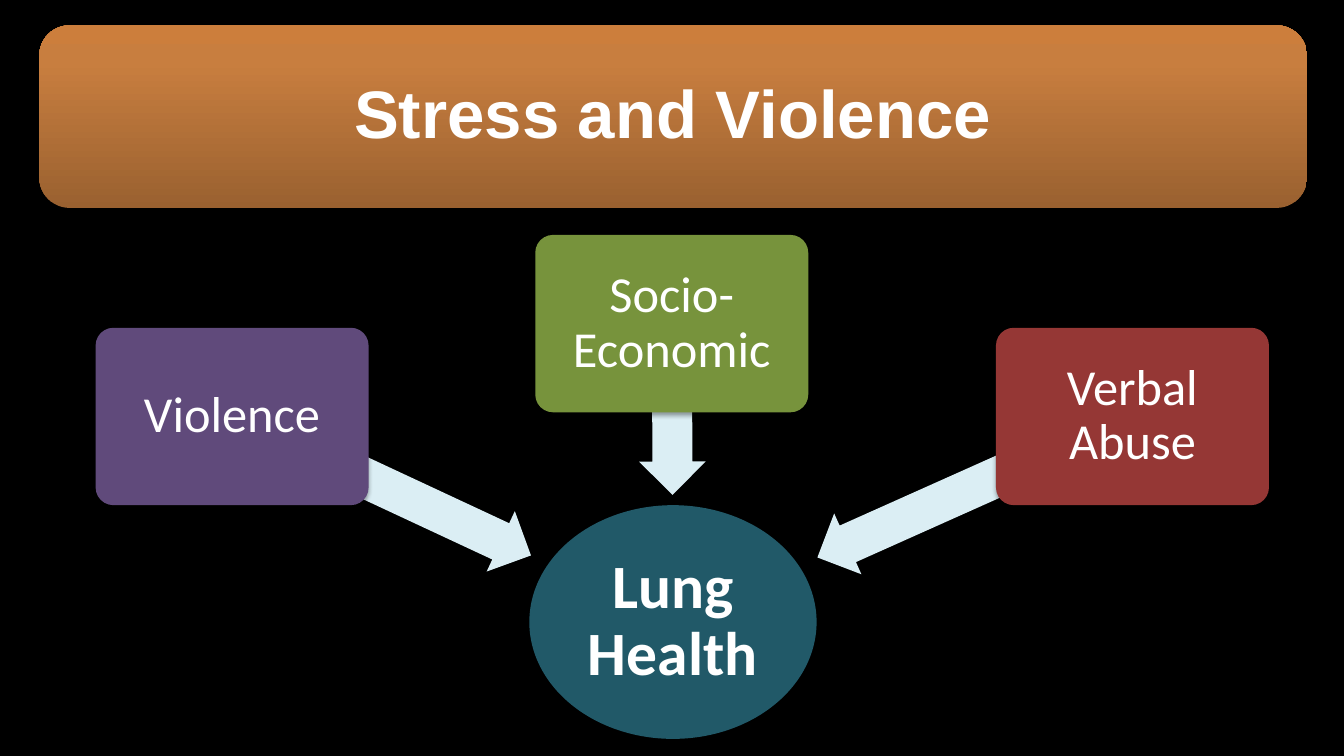
from copy import deepcopy
from dataclasses import dataclass

from lxml import etree
from pptx import Presentation
from pptx import util as u
from pptx.dml.color import RGBColor
from pptx.enum import shapes, text
from pptx.oxml import ns
from pptx.shapes.autoshape import Shape
from pptx.slide import Slide

BLACK = RGBColor(0x00, 0x00, 0x00)
WHITE = RGBColor(0xFF, 0xFF, 0xFF)
BRONZE = RGBColor(0x9A, 0x61, 0x30)
COPPER = RGBColor(0xC8, 0x7E, 0x3F)
AMBER = RGBColor(0xCC, 0x7E, 0x3C)
TEAL = RGBColor(0x21, 0x59, 0x68)
PALE_BLUE = RGBColor(0xDB, 0xEE, 0xF4)
PURPLE = RGBColor(0x60, 0x4A, 0x7B)
GREEN = RGBColor(0x77, 0x93, 0x3C)
RED = RGBColor(0x95, 0x37, 0x35)

CARD_WIDTH, CARD_HEIGHT = 6.88, 4.47
ARROW_HEIGHT = 1.68


@dataclass(frozen=True)
class Box:
    left: float
    top: float
    width: float
    height: float


@dataclass(frozen=True)
class Cause:
    label: str
    color: RGBColor
    card: Box
    arrow: Box
    rotation: float


CAUSES = [
    Cause("Violence", PURPLE, Box(2.41, 8.26, CARD_WIDTH, CARD_HEIGHT),
          Box(5.46, 11.4, 8.31, ARROW_HEIGHT), 205),
    Cause("Socio-Economic", GREEN, Box(13.49, 5.92, CARD_WIDTH, CARD_HEIGHT),
          Box(14.78, 9.47, 4.32, ARROW_HEIGHT), 269.8),
    Cause("Verbal Abuse", RED, Box(25.1, 8.26, CARD_WIDTH, CARD_HEIGHT),
          Box(20.22, 11.43, 8.71, ARROW_HEIGHT), 335.9),
]


def place(shape: Shape, box: Box) -> None:
    shape.left, shape.top = u.Cm(box.left), u.Cm(box.top)
    shape.width, shape.height = u.Cm(box.width), u.Cm(box.height)


def add_shadow(shape: Shape) -> None:
    shape.shadow.inherit = False
    effects = shape.element.spPr.find(ns.qn("a:effectLst"))
    shadow = etree.SubElement(
        effects, ns.qn("a:outerShdw"), blurRad=str(u.Pt(3.1)),
        dist=str(u.Pt(1.8)), dir="5400000", rotWithShape="0")
    color = etree.SubElement(shadow, ns.qn("a:srgbClr"), val=str(BLACK))
    etree.SubElement(color, ns.qn("a:alpha"), val="35000")


def add_figure(page: Slide, kind: shapes.MSO_SHAPE, box: Box,
               color: RGBColor) -> Shape:
    figure = page.shapes.add_shape(kind, 0, 0, 0, 0)
    place(figure, box)
    figure.fill.solid()
    figure.fill.fore_color.rgb = color
    figure.line.fill.background()
    add_shadow(figure)
    return figure


def write(shape: Shape, label: str, font: str, size: float, bold: bool,
          inset: float) -> None:
    frame = shape.text_frame
    frame.word_wrap = True
    frame.auto_size = text.MSO_AUTO_SIZE.NONE
    frame.vertical_anchor = text.MSO_ANCHOR.MIDDLE
    frame.margin_left = frame.margin_right = u.Cm(inset)
    frame.margin_top = frame.margin_bottom = u.Cm(inset)
    para = frame.paragraphs[0]
    para.text = label
    para.alignment = text.PP_ALIGN.CENTER
    para.line_spacing = 0.9
    para.font.name = font
    para.font.size = u.Pt(size)
    para.font.bold = bold
    para.font.color.rgb = WHITE


def add_banner(page: Slide) -> None:
    banner = add_figure(page, shapes.MSO_SHAPE.ROUNDED_RECTANGLE,
                        Box(0.99, 0.64, 31.95, 4.6), COPPER)
    banner.fill.gradient()
    banner.fill.gradient_angle = 90
    stop_list = banner.element.spPr.find(".//" + ns.qn("a:gsLst"))
    stop_list.append(deepcopy(stop_list[-1]))
    stops = [(0, BRONZE), (0.8, COPPER), (1, AMBER)]
    for stop, (position, color) in zip(banner.fill.gradient_stops, stops):
        stop.position = position
        stop.color.rgb = color


def add_cause(page: Slide, cause: Cause) -> None:
    arrow = add_figure(page, shapes.MSO_SHAPE.LEFT_ARROW, cause.arrow, PALE_BLUE)
    arrow.adjustments[0] = 0.6
    arrow.adjustments[1] = 0.5
    arrow.rotation = cause.rotation
    card = add_figure(page, shapes.MSO_SHAPE.ROUNDED_RECTANGLE, cause.card,
                      cause.color)
    card.adjustments[0] = 0.1
    write(card, cause.label, "Calibri", 36, False, 0.18)


def main() -> None:
    deck = Presentation()
    deck.slide_width, deck.slide_height = u.Cm(33.87), u.Cm(19.05)
    page = deck.slides.add_slide(deck.slide_layouts.get_by_name("Title Only"))
    page.background.fill.solid()
    page.background.fill.fore_color.rgb = BLACK

    add_banner(page)
    title = page.shapes.title
    place(title, Box(1.93, 0.86, 30.05, 4.14))
    write(title, "Stress and Violence", "Arial", 48, True, 0.2)
    page.shapes.element.append(title.element)

    hub = add_figure(page, shapes.MSO_SHAPE.OVAL, Box(13.34, 12.73, 7.24, 5.89),
                     TEAL)
    write(hub, "Lung Health", "Calibri", 44, True, 0.08)
    for cause in CAUSES:
        add_cause(page, cause)
    deck.save("out.pptx")


if __name__ == "__main__":
    main()
